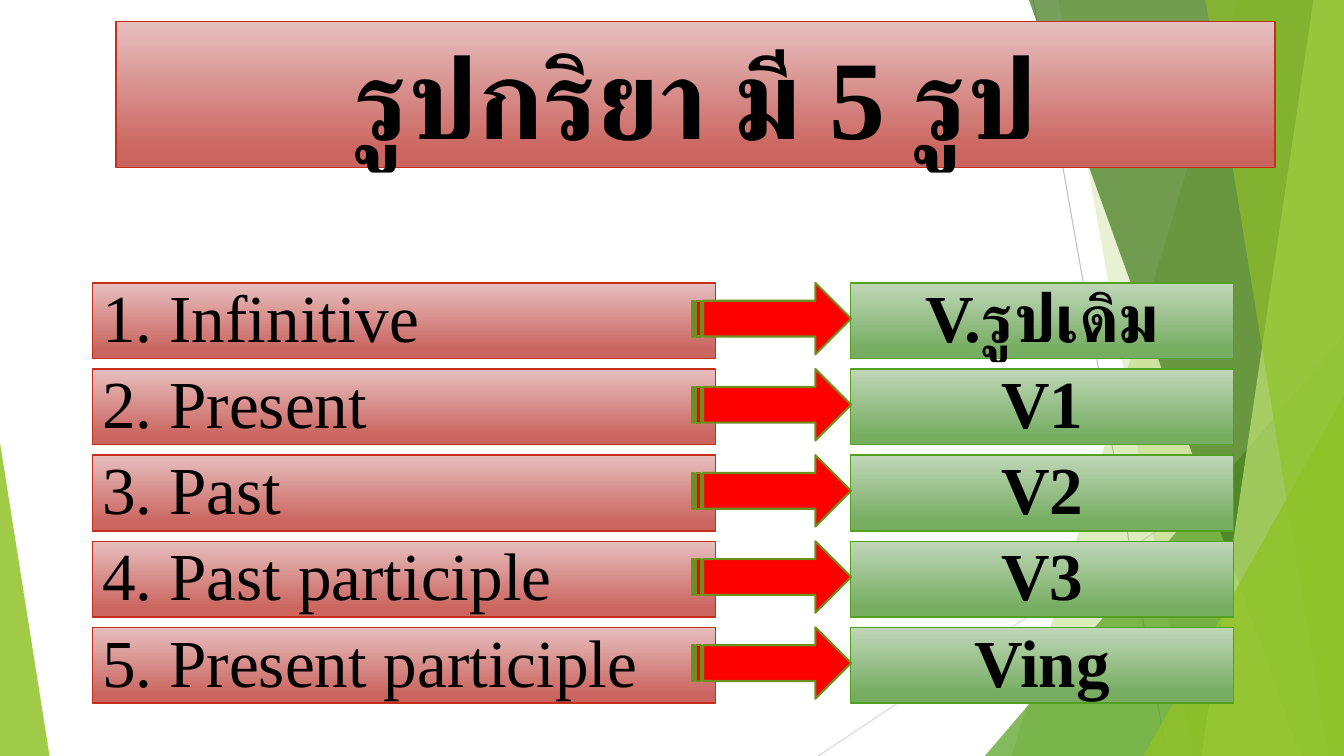
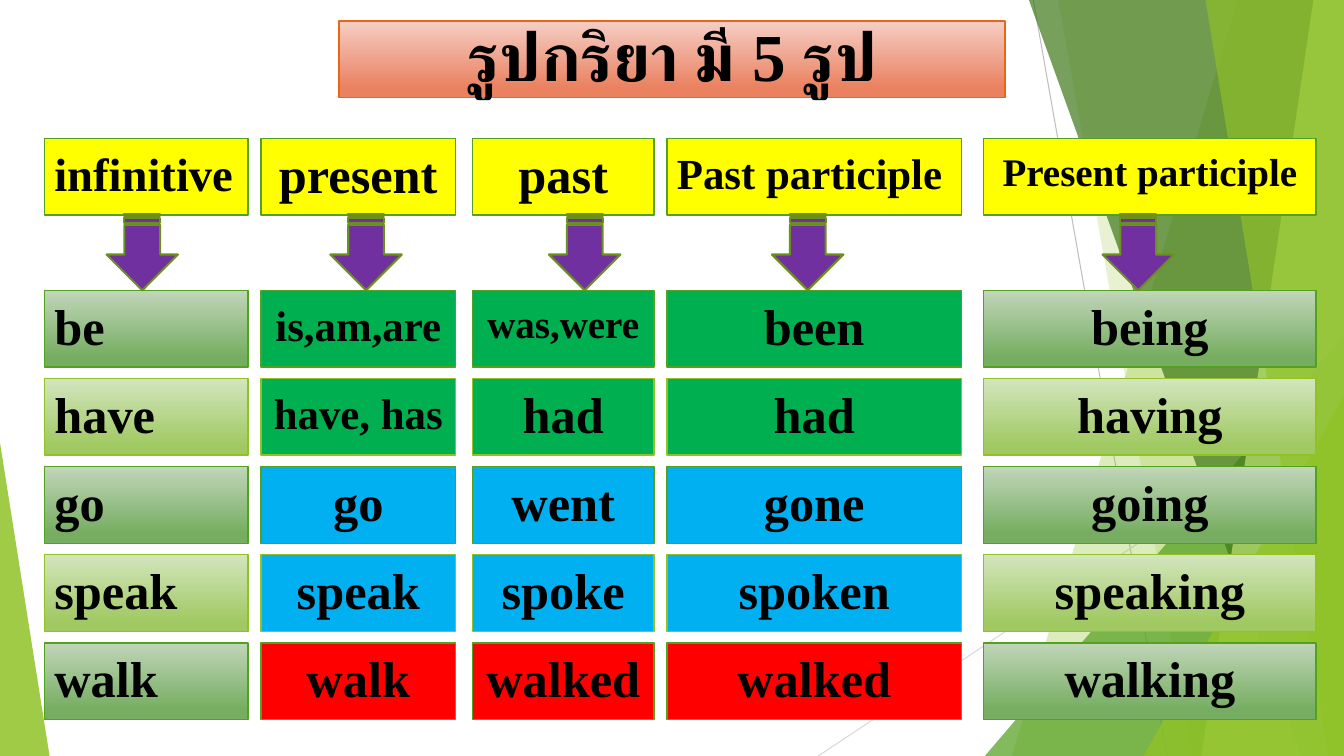
from lxml.etree import SubElement
from pptx import Presentation
from pptx.dml.color import RGBColor
from pptx.enum.shapes import MSO_CONNECTOR as CONN, MSO_SHAPE as SHAPE
from pptx.enum.text import MSO_ANCHOR as ANCHOR, PP_ALIGN as ALIGN
from pptx.oxml.ns import qn
from pptx.util import Cm, Pt

WIDTH, HEIGHT = 33.87, 19.05
FONT = "Times New Roman"
TITLE = "รูปกริยา มี 5 รูป"
RED = ("E6BFBE", "CB6560")
ORANGE = ("F5CEC5", "EA815F")
GREEN = ("C0D6B9", "76AD61")
LIME = ("D3E5BE", "A0C962")
RED_EDGE, ORANGE_EDGE, GREEN_EDGE, LIME_EDGE = "C42F1A", "E76618", "54A021", "90C226"
ARROW_EDGE = "6B901C"
SPACING = {30.6: 0.8, 27.9: 0.7}

RAYS = [
    (31.19, 25.5, WIDTH, "90C226", 30),
    (26.67, WIDTH, 30.05, "90C226", 20),
    (25.93, WIDTH, 32.79, "3F7819", 70),
    (33.1, WIDTH, 30.28, "C0E474", 70),
    (30.38, WIDTH, 33.48, "90C226", 65),
]

FORMS = [
    ("1. Infinitive", "V.รูปเดิม"),
    ("2. Present", "V1"),
    ("3. Past", "V2"),
    ("4. Past participle", "V3"),
    ("5. Present participle", "Ving"),
]

COLUMNS = [
    (1.12, 5.13, 3.58, "infinitive", ["be", "have", "go", "speak", "walk"]),
    (6.58, 4.9, 9.22, "present", ["is,am,are", "have, has", "go", "speak", "walk"]),
    (11.91, 4.57, 14.73, "past", ["was,were", "had", "went", "spoke", "walked"]),
    (16.81, 7.42, 20.35, "Past participle", ["been", "had", "gone", "spoken", "walked"]),
    (24.79, 8.38, 28.68, "Present participle",
     ["being", "having", "going", "speaking", "walking"]),
]
VERB_FILLS = ["00B050", "00B050", "00B0F0", "00B0F0", "FF0000"]
SMALL_TEXT = {
    "infinitive": 33.3, "Past participle": 30.6, "Present participle": 27.9,
    "is,am,are": 30.6, "have, has": 30.6, "was,were": 27.9,
}


def rgb(value):
    return RGBColor.from_string(value)


def paint(fill, color, alpha=None):
    if isinstance(color, tuple):
        fill.gradient()
        fill.gradient_angle = 270
        for stop, position, value in zip(fill.gradient_stops, (0, 0.88), color):
            stop.position = position
            stop.color.rgb = rgb(value)
    else:
        fill.solid()
        fill.fore_color.rgb = rgb(color)


def style(sp, color, edge=None, width=1, alpha=None):
    sp.shadow.inherit = False
    paint(sp.fill, color)
    if alpha:
        clr = sp._element.spPr.find(".//" + qn("a:srgbClr"))
        SubElement(clr, qn("a:alpha")).set("val", str(alpha * 1000))
    if edge:
        paint(sp.line.fill, edge)
        sp.line.width = Pt(width)
    else:
        sp.line.fill.background()


def add_shape(s, kind, box, color, **fmt):
    sp = s.shapes.add_shape(kind, *(Cm(v) for v in box))
    style(sp, color, **fmt)
    return sp


def write(sp, text, size=36, bold=True, align=ALIGN.CENTER, spacing=0.9, before=0):
    tf = sp.text_frame
    tf.word_wrap = True
    tf.vertical_anchor = ANCHOR.MIDDLE
    p = tf.paragraphs[0]
    p.alignment = align
    p.line_spacing = spacing
    p.space_before = Pt(before)
    r = p.add_run()
    r.text = text
    r.font.name = FONT
    r.font.size = Pt(size)
    r.font.bold = bold
    r.font.color.rgb = rgb("000000")
    SubElement(r._r.get_or_add_rPr(), qn("a:cs")).set("typeface", FONT)


def text_box(s, box, text, color, edge, **fmt):
    write(add_shape(s, SHAPE.RECTANGLE, box, color, edge=edge), text, **fmt)


def arrow(s, box, color, rotation=0):
    sp = add_shape(s, SHAPE.STRIPED_RIGHT_ARROW, box, color, edge=ARROW_EDGE, width=1.5)
    sp.rotation = rotation


def thin_line(s, ends, color):
    ln = s.shapes.add_connector(CONN.STRAIGHT, *(Cm(v) for v in ends))
    ln.line.color.rgb = rgb(color)
    ln.line.width = Pt(0.75)
    SubElement(ln._element.spPr, qn("a:effectLst"))


def ray(s, top_left, top_right, bottom_left, color, alpha):
    right = max(top_right, WIDTH)
    bottom = min(top_right, bottom_left)
    points = [(right, 0), (WIDTH, HEIGHT), (bottom, HEIGHT)]
    ff = s.shapes.build_freeform(Cm(top_left), 0)
    ff.add_line_segments([(Cm(x), Cm(y)) for x, y in points], close=True)
    style(ff.convert_to_shape(), color, alpha=alpha)


def corner(s, w, h, color, alpha, right=True):
    box = (WIDTH - w if right else 0, HEIGHT - h, w, h)
    sp = add_shape(s, SHAPE.ISOSCELES_TRIANGLE, box, color, alpha=alpha)
    sp.adjustments[0] = 1 if right else 0


def backdrop(s):
    thin_line(s, (26.04, 0, 29.41, HEIGHT), "BFBFBF")
    thin_line(s, (WIDTH, 10.24, 20.62, HEIGHT), "D9D9D9")
    for item in RAYS[:2]:
        ray(s, *item)
    corner(s, 9.05, 10.58, "54A021", 72)
    for item in RAYS[2:]:
        ray(s, *item)
    corner(s, 5.05, 9.07, "90C226", 80)
    corner(s, 1.25, 7.9, "90C226", 85, right=False)


def form_row(s, box, name, result):
    x, y, w, h = box
    result_w = 9.65
    text_box(s, (x, y, 15.7, h), name, RED, RED_EDGE,
             size=48, bold=False, align=ALIGN.LEFT)
    text_box(s, (x + w - result_w, y, result_w, h), result, GREEN, GREEN_EDGE, size=48)
    arrow(s, (x + 15.11, y, 4.01, 1.8), "FF0000")


def verb_cell(s, box, text, color, edge, left=False):
    size = SMALL_TEXT.get(text, 36)
    text_box(s, box, text, color, edge, size=size, before=10,
             spacing=SPACING.get(size, 0.9),
             align=ALIGN.LEFT if left else ALIGN.CENTER)


def verb_column(s, box, arrow_center, header, verbs, outer, left):
    x, y, w, h = box
    verb_cell(s, (x, y, w, h), header, "FFFF00", GREEN_EDGE,
              left or header == "Past participle")
    for i, (verb, color) in enumerate(zip(verbs, VERB_FILLS)):
        shade, edge = ((GREEN, GREEN_EDGE), (LIME, LIME_EDGE))[i % 2]
        cell = (x, y + 3.83 + 2.22 * i, w, h)
        verb_cell(s, cell, verb, shade if outer else color, edge, left)
    arrow(s, (arrow_center - 0.96, y + 1.96, 1.93, 1.8), "7030A0", rotation=90)


def forms_slide(s):
    backdrop(s)
    text_box(s, (2.92, 0.55, 29.21, 3.68), TITLE, RED, RED_EDGE, size=80, spacing=1)
    for i, (name, result) in enumerate(FORMS):
        form_row(s, (2.33, 7.13 + 2.17 * i, 28.76, 1.91), name, result)


def verbs_slide(s):
    backdrop(s)
    text_box(s, (8.54, 0.53, 16.79, 1.93), TITLE, ORANGE, ORANGE_EDGE, size=48, before=10)
    last = len(COLUMNS) - 1
    for i, (x, w, arrow_center, header, verbs) in enumerate(COLUMNS):
        verb_column(s, (x, 3.49, w, 1.93), arrow_center, header, verbs,
                    outer=i in (0, last), left=i == 0)


def main():
    prs = Presentation()
    prs.slide_width, prs.slide_height = Cm(WIDTH), Cm(HEIGHT)
    for build in (forms_slide, verbs_slide):
        build(prs.slides.add_slide(prs.slide_layouts[6]))
    prs.save("out.pptx")


if __name__ == "__main__":
    main()
